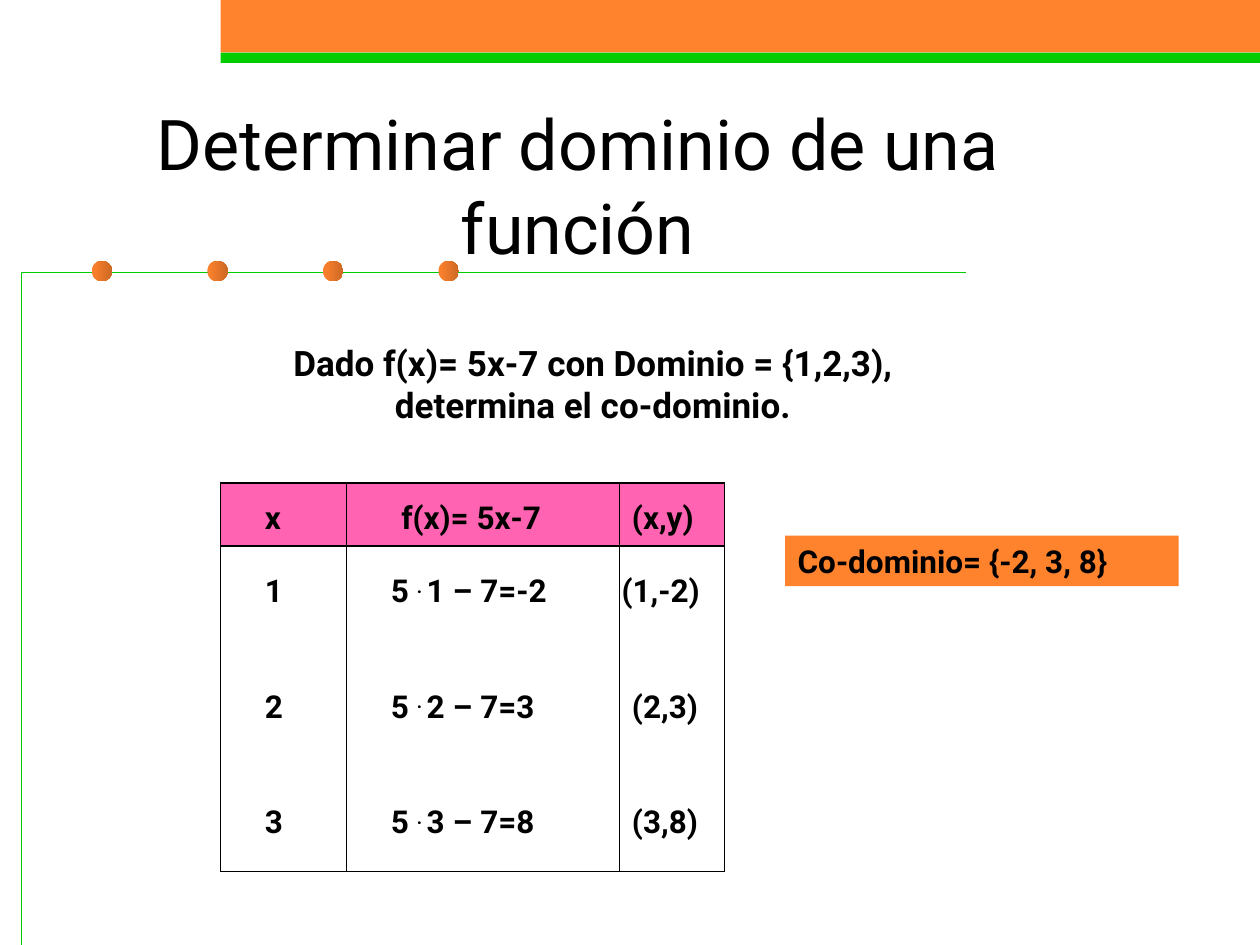
from dataclasses import dataclass

from lxml import etree
from pptx import Presentation
from pptx.dml.color import RGBColor
from pptx.enum.shapes import MSO_SHAPE
from pptx.enum.text import MSO_ANCHOR, PP_ALIGN
from pptx.oxml.ns import qn
from pptx.util import Cm, Pt

RECTANGLE, OVAL = MSO_SHAPE.RECTANGLE, MSO_SHAPE.OVAL
TOP, MIDDLE = MSO_ANCHOR.TOP, MSO_ANCHOR.MIDDLE
LEFT, CENTER = PP_ALIGN.LEFT, PP_ALIGN.CENTER
FONT = "Roboto"
ORANGE, GREEN, PINK, BLACK = "FF822D", "00CC00", "FF63B1", "000000"
DARK_ORANGE = "CD6924"
COLUMN_WIDTHS = (2.54, 5.5, 2.12)
ROW_HEIGHTS = (1.27, 2.33, 2.33, 1.9)
DOT_COUNT, DOT_SIZE, DOT_START, DOT_STEP, DOT_TOP = 4, 0.41, 1.85, 2.33, 5.26


@dataclass
class Box:
    left: float
    top: float
    width: float
    height: float

    def lengths(self) -> tuple:
        return Cm(self.left), Cm(self.top), Cm(self.width), Cm(self.height)


@dataclass
class Entry:
    text: str
    indent: float
    raised: str = ""
    rest: str = ""


ROWS = (
    (Entry("x", 0.89), Entry("f(x)= 5x-7", 1.1), Entry("(x,y)", 0.25)),
    (Entry("1", 0.89), Entry("5 ", 0.89, ". ", "1 – 7=-2"), Entry("(1,-2)", 0.04)),
    (Entry("2", 0.89), Entry("5 ", 0.89, ". ", "2 – 7=3"), Entry("(2,3)", 0.25)),
    (Entry("3", 0.89), Entry("5 ", 0.89, ". ", "3 – 7=8"), Entry("(3,8)", 0.25)),
)


def color(value: str) -> RGBColor:
    return RGBColor.from_string(value)


def style_text(frame, size: float, bold: bool, align, anchor) -> None:
    frame.vertical_anchor = anchor
    for paragraph in frame.paragraphs:
        paragraph.alignment = align
        for run in paragraph.runs:
            run.font.name = FONT
            run.font.size = Pt(size)
            run.font.bold = bold
            run.font.color.rgb = color(BLACK)


def add_plain(slide, preset, box: Box, fill: str):
    shape = slide.shapes.add_shape(preset, *box.lengths())
    shape.shadow.inherit = False
    shape.fill.solid()
    shape.fill.fore_color.rgb = color(fill)
    shape.line.fill.background()
    return shape


def add_dot(slide, left: float) -> None:
    dot = add_plain(slide, OVAL, Box(left, DOT_TOP, DOT_SIZE, DOT_SIZE), ORANGE)
    dot.fill.gradient()
    dot.fill.gradient_angle = 0
    for stop, shade, position in zip(dot.fill.gradient_stops, (ORANGE, DARK_ORANGE), (0, 1)):
        stop.color.rgb = color(shade)
        stop.position = position


def add_frame_line(slide) -> None:
    builder = slide.shapes.build_freeform(Cm(0.43), Cm(19.05))
    builder.add_line_segments([(Cm(0.43), Cm(5.5)), (Cm(19.47), Cm(5.5))], close=False)
    corner = builder.convert_to_shape()
    corner.shadow.inherit = False
    corner.fill.background()
    corner.line.color.rgb = color(GREEN)
    corner.line.width = Pt(0.75)


def set_borders(cell, top: bool, bottom: bool) -> None:
    properties = cell._tc.get_or_add_tcPr()
    for side, visible in (("L", True), ("R", True), ("T", top), ("B", bottom)):
        border = etree.SubElement(properties, qn(f"a:ln{side}"), w=str(Pt(1)))
        if visible:
            fill = etree.SubElement(border, qn("a:solidFill"))
            etree.SubElement(fill, qn("a:srgbClr"), val=BLACK)
        else:
            etree.SubElement(border, qn("a:noFill"))


def fill_cell(cell, entry: Entry, row: int) -> None:
    header = row == 0
    set_borders(cell, top=row <= 1, bottom=header or row == len(ROWS) - 1)
    if header:
        cell.fill.solid()
        cell.fill.fore_color.rgb = color(PINK)
    else:
        cell.fill.background()
    cell.margin_left, cell.margin_right = Cm(entry.indent), Cm(0)
    cell.margin_top, cell.margin_bottom = Cm(0.34 if header else 0.55), Cm(0)
    cell.text_frame.text = entry.text
    paragraph = cell.text_frame.paragraphs[0]
    if entry.raised:
        dot_run = paragraph.add_run()
        dot_run.text = entry.raised
        dot_run.font._element.set("baseline", "30000")
        paragraph.add_run().text = entry.rest
    style_text(cell.text_frame, 18, True, LEFT, TOP)
    cell.vertical_anchor = TOP


def add_values(slide) -> None:
    box = Box(4.45, 9.74, sum(COLUMN_WIDTHS), sum(ROW_HEIGHTS))
    values = slide.shapes.add_table(len(ROWS), len(COLUMN_WIDTHS), *box.lengths()).table
    values.first_row = values.horz_banding = False
    for column, width in zip(values.columns, COLUMN_WIDTHS):
        column.width = Cm(width)
    for index, (entries, height) in enumerate(zip(ROWS, ROW_HEIGHTS)):
        values.rows[index].height = Cm(height)
        for column, entry in enumerate(entries):
            fill_cell(values.cell(index, column), entry, index)


def main() -> None:
    deck = Presentation()
    deck.slide_width, deck.slide_height = Cm(25.4), Cm(19.05)
    slide = deck.slides.add_slide(deck.slide_layouts[5])

    add_plain(slide, RECTANGLE, Box(4.45, 0, 20.95, 1.06), ORANGE)
    add_plain(slide, RECTANGLE, Box(4.45, 1.06, 20.95, 0.21), GREEN)
    add_frame_line(slide)
    for index in range(DOT_COUNT):
        add_dot(slide, DOT_START + index * DOT_STEP)

    heading = slide.shapes.title
    heading.left, heading.top, heading.width, heading.height = Box(0.85, 2.12, 21.59, 3.18).lengths()
    heading.text_frame.text = "Determinar dominio de una función"
    style_text(heading.text_frame, 40, False, CENTER, MIDDLE)

    problem = slide.shapes.add_textbox(*Box(1.69, 6.14, 20.53, 3.18).lengths())
    problem.text_frame.word_wrap = True
    problem.text_frame.text = "Dado f(x)= 5x-7 con Dominio = {1,2,3),\vdetermina el co-dominio."
    style_text(problem.text_frame, 20, True, CENTER, MIDDLE)

    add_values(slide)

    codomain = add_plain(slide, RECTANGLE, Box(15.83, 10.8, 7.93, 1.02), ORANGE)
    codomain.text_frame.word_wrap = True
    codomain.text_frame.text = "Co-dominio= {-2, 3, 8}"
    style_text(codomain.text_frame, 18, True, LEFT, TOP)

    deck.save("out.pptx")


if __name__ == "__main__":
    main()
